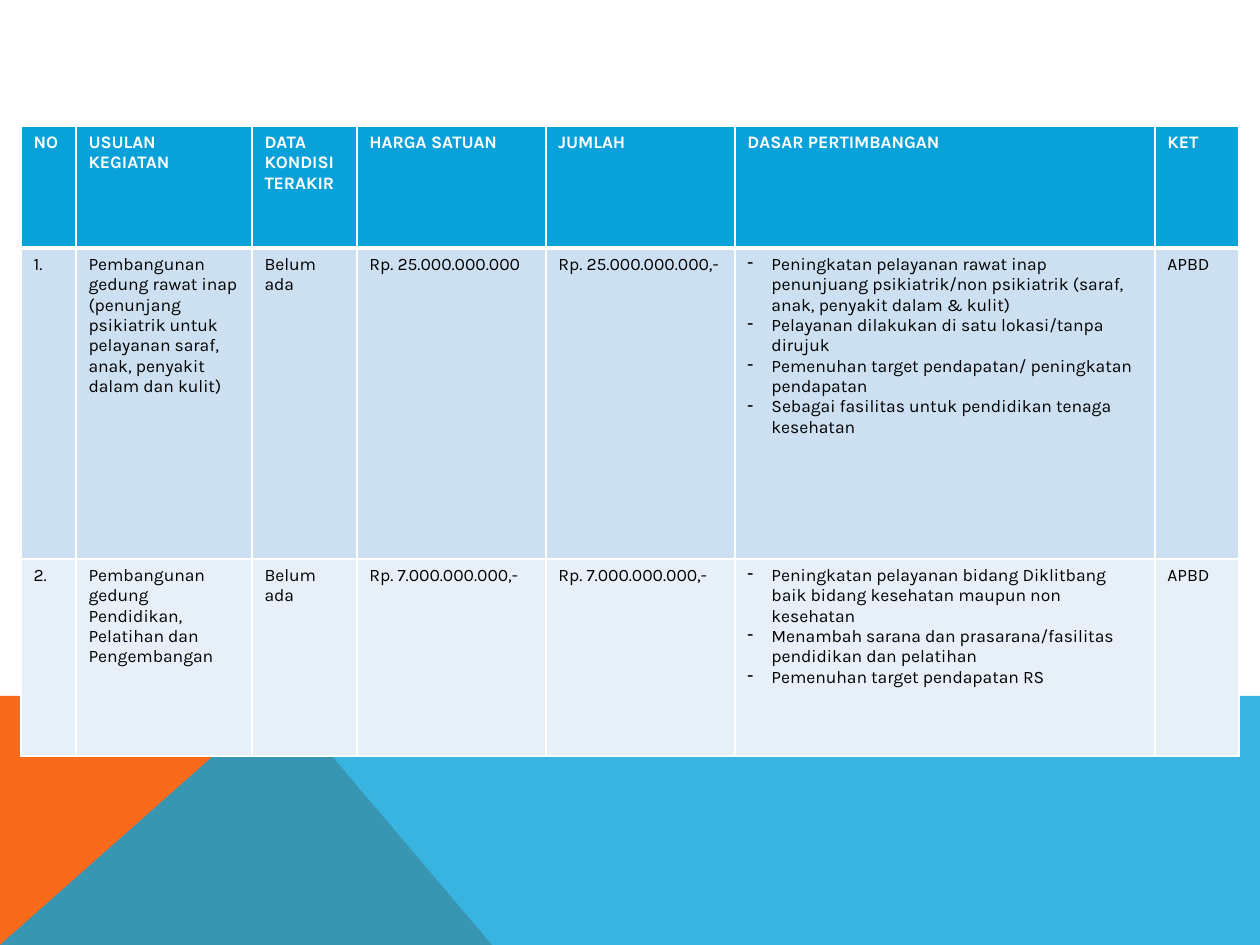
"""Build a slide with a table of proposed hospital building projects."""
from dataclasses import dataclass

from lxml.etree import SubElement
from pptx import Presentation
from pptx.dml.color import RGBColor as RGB
from pptx.oxml.ns import qn
from pptx.util import Emu, Pt

HEADERS = ["NO", "USULAN KEGIATAN", "DATA KONDISI TERAKIR", "HARGA SATUAN",
           "JUMLAH", "DASAR PERTIMBANGAN", "KET"]
PROJECTS = [
    ["1.",
     "Pembangunan gedung rawat inap (penunjang psikiatrik untuk pelayanan "
     "saraf, anak, penyakit dalam dan kulit)",
     "Belum ada", "Rp. 25.000.000.000", "Rp. 25.000.000.000,-",
     ["Peningkatan pelayanan rawat inap penunjuang psikiatrik/non psikiatrik "
      "(saraf, anak, penyakit dalam & kulit)",
      "Pelayanan dilakukan di satu lokasi/tanpa dirujuk",
      "Pemenuhan target pendapatan/ peningkatan pendapatan",
      "Sebagai fasilitas untuk pendidikan tenaga kesehatan"],
     "APBD"],
    ["2.",
     "Pembangunan gedung Pendidikan, Pelatihan dan Pengembangan",
     "Belum ada", "Rp. 7.000.000.000,-", "Rp. 7.000.000.000,-",
     ["Peningkatan pelayanan bidang Diklitbang baik bidang kesehatan maupun "
      "non kesehatan",
      "Menambah sarana dan prasarana/fasilitas pendidikan dan pelatihan",
      "Pemenuhan target pendapatan RS"],
     "APBD"],
]
COL_WIDTHS = [55, 176, 105, 189, 189, 420, 84]
ROW_HEIGHTS = [122, 311, 197]
TABLE_LEFT, TABLE_TOP = 21, 126
SLIDE_W, SLIDE_H = 1260, 945
BAND_TOP, PEAK_X, FOOT_X = 696, 281, 492
BULLET_INDENT = 24


@dataclass(frozen=True)
class Theme:
    font: str = "Karla"
    size: int = 10
    blue: str = "08A1D9"
    orange: str = "F96A1B"
    white: str = "FFFFFF"
    black: str = "000000"
    bands: tuple = ("CCE0F1", "E7F0F8")
    band_alpha: int = 80
    rule: int = 1
    header_rule: int = 3


THEME = Theme()


def px(n):
    return Emu(round(n * 914400 / 126))


def add_polygon(shapes, points, color, alpha=100):
    start, *rest = [(px(x), px(y)) for x, y in points]
    builder = shapes.build_freeform(*start)
    builder.add_line_segments(rest, close=True)
    sp = builder.convert_to_shape()
    sp.shadow.inherit = False
    sp.line.fill.background()
    sp.fill.solid()
    sp.fill.fore_color.rgb = RGB.from_string(color)
    if alpha < 100:
        clr = sp.fill._xPr.find(".//" + qn("a:srgbClr"))
        SubElement(clr, qn("a:alpha"), val=str(alpha * 1000))


def set_borders(cell, top, bottom):
    tc_pr = cell._tc.get_or_add_tcPr()
    widths = {"lnL": THEME.rule, "lnR": THEME.rule, "lnT": top, "lnB": bottom}
    for tag, width in widths.items():
        ln = SubElement(tc_pr, qn(f"a:{tag}"), w=str(Pt(width)))
        fill = SubElement(ln, qn("a:solidFill"))
        SubElement(fill, qn("a:srgbClr"), val=THEME.white)


def set_bullet(p):
    p_pr = p._p.get_or_add_pPr()
    p_pr.set("marL", str(px(BULLET_INDENT)))
    p_pr.set("indent", str(-px(BULLET_INDENT)))
    SubElement(p_pr, qn("a:buChar"), char="-")


def fill_cell(cell, content, fill, color, bold):
    cell.fill.solid()
    cell.fill.fore_color.rgb = RGB.from_string(fill)
    tf = cell.text_frame
    bulleted = isinstance(content, list)
    for i, text in enumerate(content if bulleted else [content]):
        p = tf.add_paragraph() if i else tf.paragraphs[0]
        if bulleted:
            set_bullet(p)
        r = p.add_run()
        r.text = text
        r.font.name, r.font.size, r.font.bold = THEME.font, Pt(THEME.size), bold
        r.font.color.rgb = RGB.from_string(color)


def add_project_table(shapes):
    rows = [HEADERS, *PROJECTS]
    table = shapes.add_table(
        len(rows), len(HEADERS), px(TABLE_LEFT), px(TABLE_TOP),
        px(sum(COL_WIDTHS)), px(sum(ROW_HEIGHTS))).table
    for column, width in zip(table.columns, COL_WIDTHS):
        column.width = px(width)
    for i, (row, height) in enumerate(zip(table.rows, ROW_HEIGHTS)):
        row.height = px(height)
        header = i == 0
        fill = THEME.blue if header else THEME.bands[(i - 1) % 2]
        color = THEME.white if header else THEME.black
        top = THEME.header_rule if i == 1 else THEME.rule
        bottom = THEME.header_rule if header else THEME.rule
        for cell, content in zip(row.cells, rows[i]):
            set_borders(cell, top, bottom)
            fill_cell(cell, content, fill, color, header)


def main():
    prs = Presentation()
    prs.slide_width, prs.slide_height = px(SLIDE_W), px(SLIDE_H)
    shapes = prs.slides.add_slide(prs.slide_layouts[6]).shapes
    corner, peak = (0, SLIDE_H), (PEAK_X, BAND_TOP)
    add_polygon(shapes, [corner, (0, BAND_TOP), peak, (FOOT_X, SLIDE_H)],
                THEME.orange)
    add_polygon(shapes, [corner, peak, (SLIDE_W, BAND_TOP), (SLIDE_W, SLIDE_H)],
                THEME.blue, THEME.band_alpha)
    add_project_table(shapes)
    prs.save("out.pptx")


if __name__ == "__main__":
    main()
